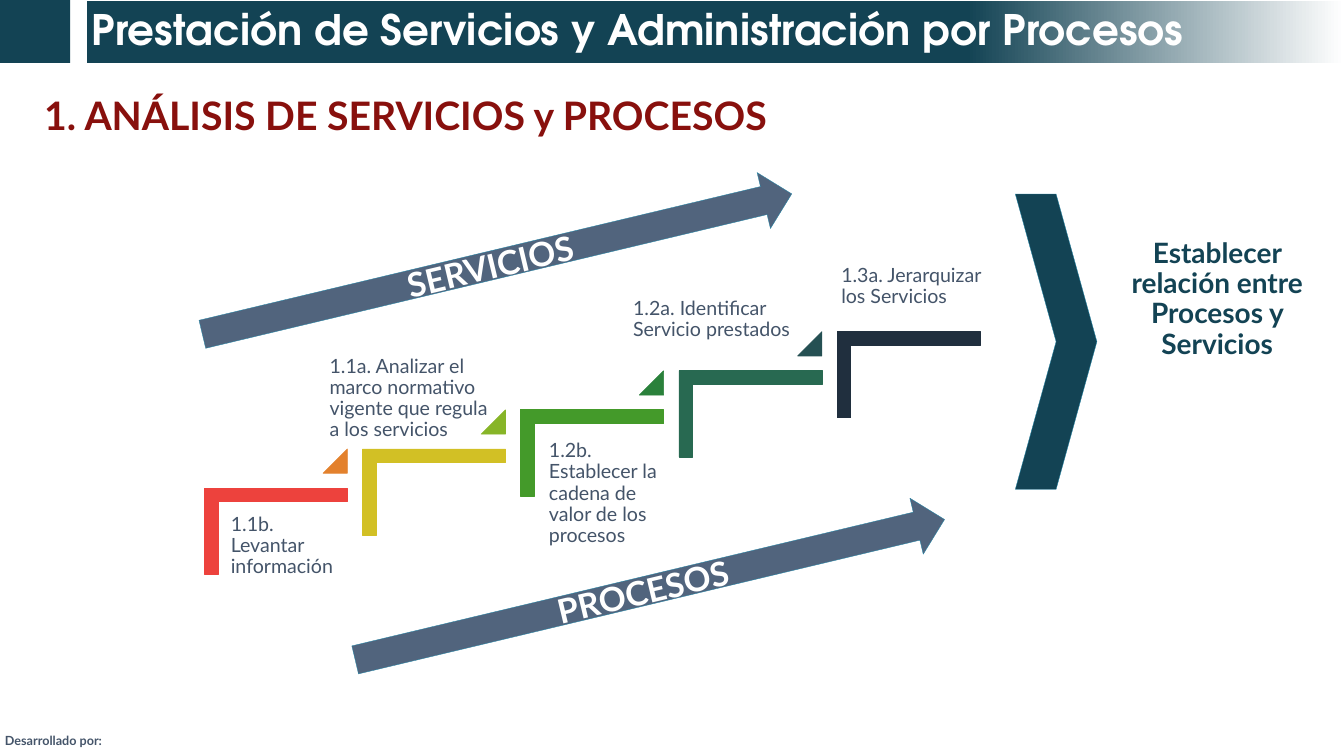
import pptx
import pptx.dml.color
import pptx.enum.shapes
import pptx.enum.text
import pptx.util

Cm = pptx.util.Cm
Pt = pptx.util.Pt
SHAPE = pptx.enum.shapes.MSO_SHAPE
ALIGN = pptx.enum.text.PP_ALIGN
ANCHOR = pptx.enum.text.MSO_ANCHOR

TEAL = "134354"
SLATE = "445469"
OUTLINE = "2686A7"
WHITE = "FFFFFF"

STEP_COLORS = ["ED423D", "D2C025", "449A2A", "286951", "202F3E"]
RISE_COLORS = ["E3812D", "87B528", "2A813B", "255053"]
STEP_RUN = 7.97
STEP_RISE = 1.97

STEP_LABELS = [
    ("1.1b. Levantar información", 11.33, 25.63, 6.5, 5.72, 0.3),
    ("1.2b. Establecer la cadena de valor de los procesos", 27.36, 21.92, 6.5, 5.72, 0.3),
    ("1.1a. Analizar el marco normativo vigente que regula a los servicios",
     16.36, 17.7, 8.69, 4.39, 0.25),
    ("1.2a. Identificar Servicio prestados", 31.65, 14.81, 8.66, 5.56, 0.25),
    ("1.3a. Jerarquizar los Servicios", 42.14, 13.11, 8.92, 5.56, 0.25),
]


def color(value):
    return pptx.dml.color.RGBColor.from_string(value)


def write_text(shape, text, size=28, font="Lato", fill=SLATE, bold=False, align=ALIGN.LEFT,
               anchor=ANCHOR.TOP, spacing=1.0, wrap=True, inset=None):
    frame = shape.text_frame
    frame.word_wrap = wrap
    frame.vertical_anchor = anchor
    if inset is not None:
        frame.margin_left = frame.margin_right = Cm(inset)
        frame.margin_top = frame.margin_bottom = Cm(inset)
    paragraph = frame.paragraphs[0]
    paragraph.alignment = align
    paragraph.line_spacing = spacing
    run = paragraph.add_run()
    run.text = text
    run.font.size = Pt(size)
    run.font.name = font
    run.font.bold = bold
    run.font.color.rgb = color(fill)


def add_label(slide, text, left, top, width, height, **text_format):
    box = slide.shapes.add_textbox(Cm(left), Cm(top), Cm(width), Cm(height))
    write_text(box, text, **text_format)


def add_figure(slide, kind, left, top, width, height, fill, line=None, line_width=0.5,
               rotation=0, adjustments=()):
    shape = slide.shapes.add_shape(kind, Cm(left), Cm(top), Cm(width), Cm(height))
    shape.shadow.inherit = False
    shape.rotation = rotation
    shape.fill.solid()
    shape.fill.fore_color.rgb = color(fill)
    if line:
        shape.line.color.rgb = color(line)
        shape.line.width = Pt(line_width)
    else:
        shape.line.fill.background()
    for index, value in enumerate(adjustments):
        shape.adjustments[index] = value
    return shape


def add_header(slide):
    add_figure(slide, SHAPE.RECTANGLE, -0.05, -0.03, 3.58, 3.2, TEAL)
    banner = add_figure(slide, SHAPE.RECTANGLE, 4.37, 0.03, 63.35, 3.15, TEAL)
    banner.fill.gradient()
    banner.fill.gradient_angle = 0
    for stop, position, value in zip(banner.fill.gradient_stops, (0.7, 1), (TEAL, WHITE)):
        stop.position = position
        stop.color.rgb = color(value)
    write_text(banner, "Prestación de Servicios y Administración por Procesos", size=60,
               font="TeX Gyre Adventor", fill=WHITE, bold=True, anchor=ANCHOR.MIDDLE,
               spacing=0.9)


def add_staircase(slide):
    for index, fill in enumerate(STEP_COLORS):
        add_figure(slide, SHAPE.CORNER, 11.73 + index * STEP_RUN, 23.16 - index * STEP_RISE,
                   4.34, 7.21, fill, line=fill, line_width=1, rotation=90,
                   adjustments=(0.16, 0.16))
    for index, fill in enumerate(RISE_COLORS):
        add_figure(slide, SHAPE.ISOSCELES_TRIANGLE, 16.28 + index * STEP_RUN,
                   22.63 - index * STEP_RISE, 1.22, 1.22, fill, line=fill, line_width=1,
                   adjustments=(1,))
    for text, left, top, width, height, inset in STEP_LABELS:
        add_label(slide, text, left, top, width, height, spacing=0.9, inset=inset)


def add_rising_arrow(slide, text, left, top):
    arrow = add_figure(slide, SHAPE.RIGHT_ARROW, left, top, 30.53, 2.9, "51647D",
                       line=OUTLINE, rotation=346.6)
    write_text(arrow, text, size=48, fill=WHITE, bold=True, align=ALIGN.CENTER,
               anchor=ANCHOR.MIDDLE)


def main():
    presentation = pptx.Presentation()
    presentation.slide_width = Cm(67.72)
    presentation.slide_height = Cm(38.1)
    slide = presentation.slides.add_slide(presentation.slide_layouts[6])

    add_label(slide, "Desarrollado por:", 0, 36.83, 5.87, 1.02, size=18, bold=True, wrap=False)
    add_header(slide)
    add_label(slide, "1. ANÁLISIS DE SERVICIOS y PROCESOS", 1.98, 4.5, 40.16, 2.64,
              size=56, fill="88100D", bold=True, wrap=False)
    add_staircase(slide)
    add_label(slide, "Establecer relación entre Procesos y Servicios", 55.5, 11.81, 11.66, 5.56,
              size=40, fill=TEAL, bold=True, align=ALIGN.CENTER, spacing=0.9, inset=0.25)
    add_rising_arrow(slide, "SERVICIOS", 9.78, 11.86)
    add_rising_arrow(slide, "PROCESOS", 17.48, 28.27)
    add_figure(slide, SHAPE.CHEVRON, 51.16, 9.78, 4.11, 14.88, TEAL, line=OUTLINE)

    presentation.save("out.pptx")


if __name__ == "__main__":
    main()
